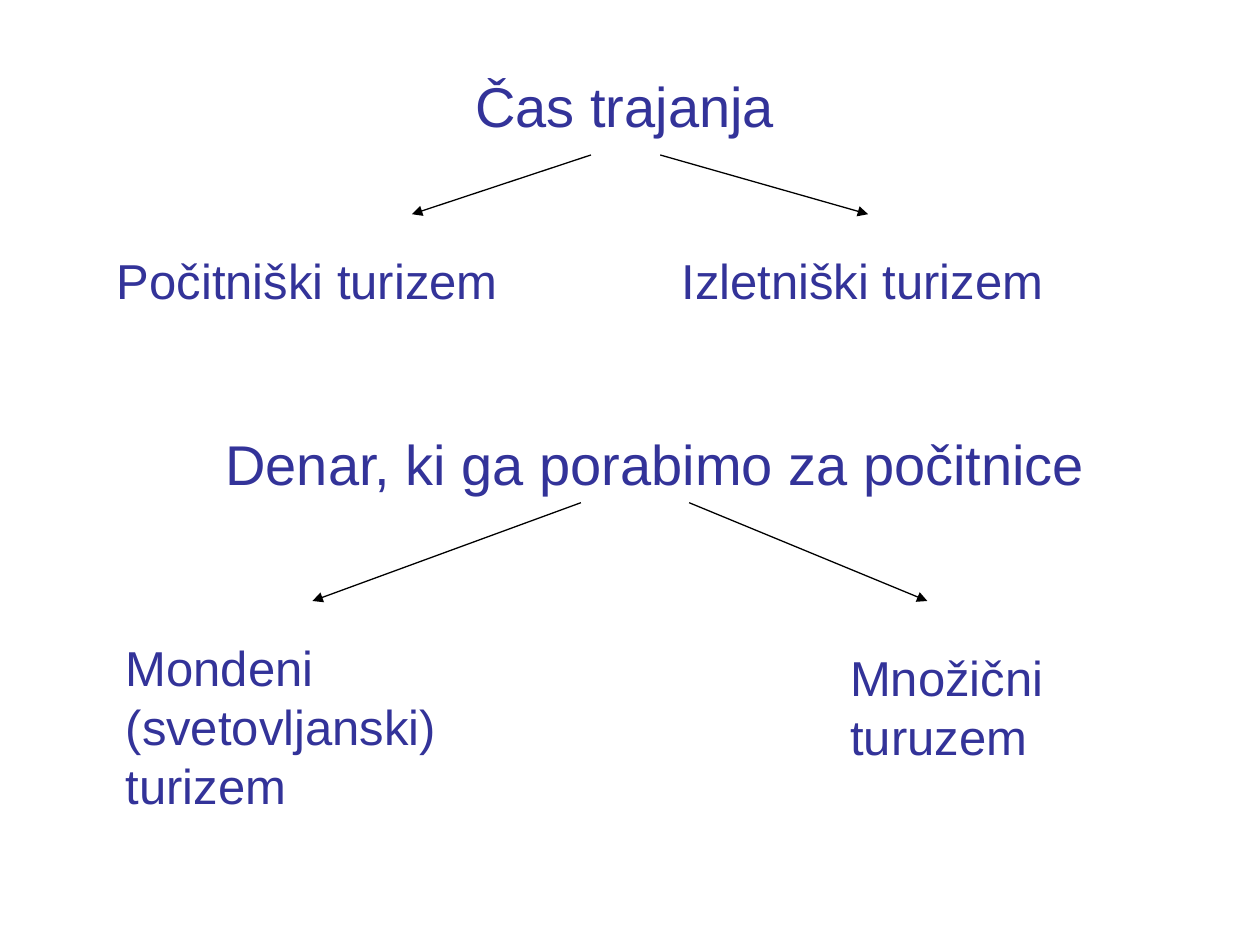
from lxml.etree import SubElement
from pptx import Presentation
from pptx.dml.color import RGBColor
from pptx.enum.shapes import MSO_CONNECTOR
from pptx.enum.text import MSO_AUTO_SIZE, PP_ALIGN
from pptx.oxml.ns import qn
from pptx.util import Inches, Pt

prs = Presentation()
prs.slide_width, prs.slide_height = Inches(10), Inches(7.5)
s = prs.slides.add_slide(prs.slide_layouts[6])

# Lengths are percentages of the slide's width and height
COL, ROW = prs.slide_width / 100, prs.slide_height / 100


def color(hex_text):
    return RGBColor.from_string(hex_text)


def add_text(text, x, y, w, h, size=28, align=PP_ALIGN.LEFT, fill="333399"):
    box = s.shapes.add_textbox(int(x * COL), int(y * ROW), int(w * COL), int(h * ROW))
    tf = box.text_frame
    tf.word_wrap = True
    tf.auto_size = MSO_AUTO_SIZE.SHAPE_TO_FIT_TEXT
    p = tf.paragraphs[0]
    p.alignment = align
    r = p.add_run()
    r.text = text
    r.font.name, r.font.size = "Arial", Pt(size)
    r.font.color.rgb = color(fill)


# Criteria
add_text("Čas trajanja", 31.9, 6.93, 35.4, 8.4, size=32, align=PP_ALIGN.CENTER)
add_text("Denar, ki ga porabimo za počitnice", 16.9, 44.8, 70.9, 8.4, size=32)

# Kinds of tourism under each criterion
add_text("Počitniški turizem", 8.3, 25.87, 37, 7.6)
add_text("Izletniški turizem", 53.1, 25.87, 40.2, 7.6)
add_text("Mondeni (svetovljanski) turizem", 9, 66.8, 32.3, 20)
add_text("Množični turuzem", 66.5, 67.87, 28.4, 13.73)

# Arrow pairs: top and bottom row, then start and end column of each arrow
branches = [
    (16.4, 22.67, [(46.9, 32.7), (52.4, 68.9)]),
    (53.2, 63.6, [(46.1, 24.8), (54.7, 73.6)]),
]
for top, bottom, arrows in branches:
    for start, end in arrows:
        arrow = s.shapes.add_connector(
            MSO_CONNECTOR.STRAIGHT,
            int(start * COL), int(top * ROW), int(end * COL), int(bottom * ROW))
        arrow.line.color.rgb = color("000000")
        arrow.line.width = Pt(0.75)
        SubElement(arrow.line._get_or_add_ln(), qn("a:tailEnd"), type="triangle")
        SubElement(arrow._element.spPr, qn("a:effectLst"))

prs.save("out.pptx")
